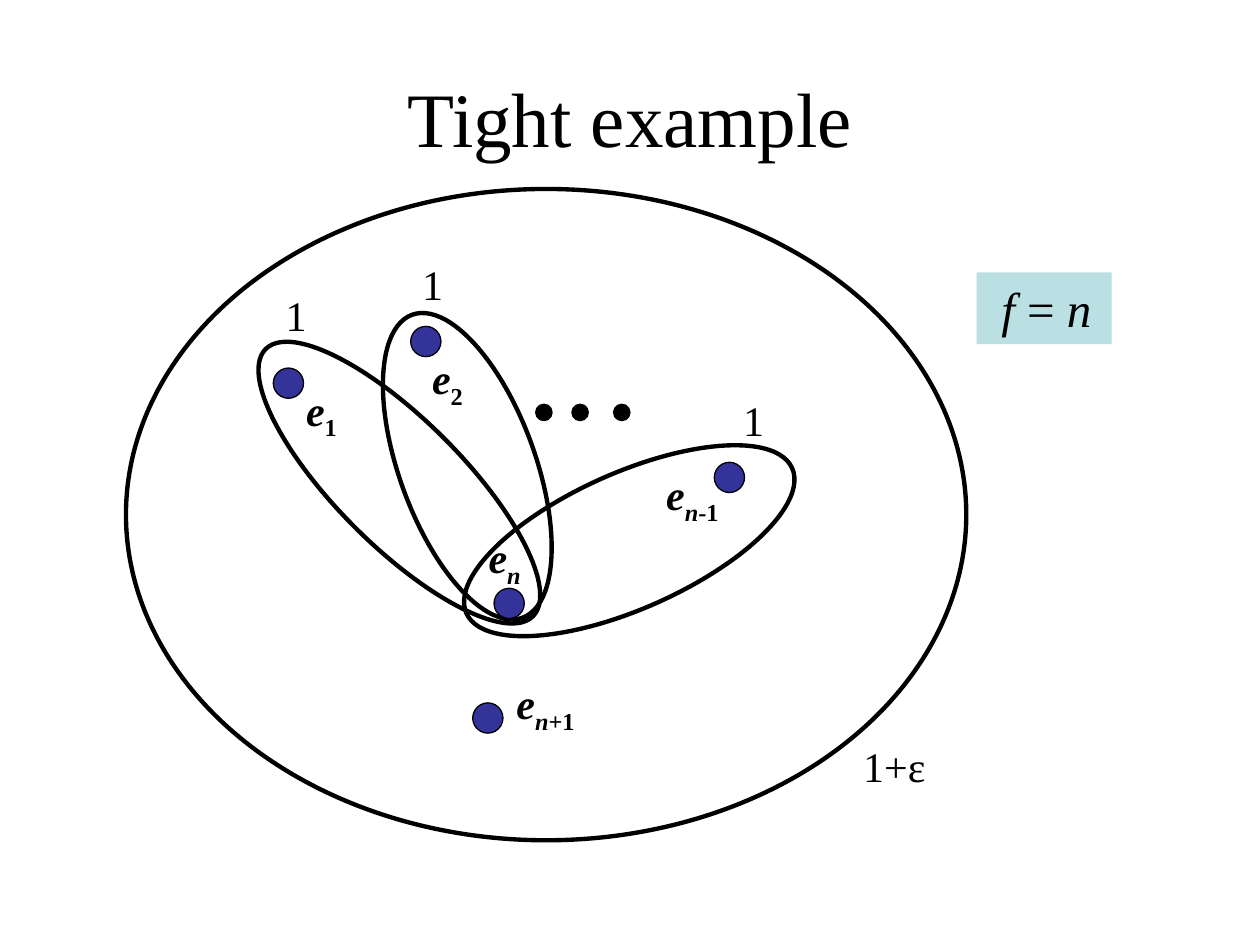
"""Build the slide showing a tight example for set cover."""
from dataclasses import dataclass

from pptx import Presentation
from pptx.dml.color import RGBColor
from pptx.enum.shapes import MSO_SHAPE
from pptx.enum.text import MSO_ANCHOR, MSO_AUTO_SIZE, PP_ALIGN
from pptx.util import Cm, Pt


@dataclass(frozen=True)
class Theme:
    font: str = "Times New Roman"
    ink: RGBColor = RGBColor(0x00, 0x00, 0x00)
    element: RGBColor = RGBColor(0x33, 0x33, 0x99)
    panel: RGBColor = RGBColor(0xBB, 0xE0, 0xE3)
    title_size: int = 44
    label_size: int = 24
    formula_size: int = 28
    set_line: float = 2.5
    dot_line: float = 0.75


THEME = Theme()
TITLE = "Tight example"
TITLE_BOX = (1.27, 0.76, 22.86, 3.18)
SETS = [
    ((4.24, 8.46, 7.62, 2.54), 45),
    ((6.17, 8.03, 6.5, 2.74), 70),
    ((9.09, 9.53, 7.19, 2.74), 156),
    ((2.54, 3.81, 16.94, 13.13), 0),
]
ELEMENT_DIAMETER = 0.61
ELEMENTS = [(9.53, 14.17), (5.51, 7.42), (14.4, 9.32), (9.96, 11.86), (8.28, 6.58)]
ELLIPSIS_DIAMETER = 0.33
ELLIPSIS = [(10.8, 8.15), (11.53, 8.15), (12.37, 8.15)]
LABEL_HEIGHT = 1.27
COSTS = [
    ("1", 5.51, 5.72, 0.94),
    ("1", 8.26, 5.08, 0.94),
    ("1", 14.73, 7.82, 0.94),
    ("1+ε", 17.15, 14.81, 1.78),
]
ELEMENT_LABELS = [
    ("", "1", 5.92, 7.62, 1.17),
    ("", "2", 8.46, 6.99, 1.17),
    ("n", "-1", 13.18, 9.32, 1.68),
    ("n", "", 9.6, 10.59, 1.19),
    ("n", "+1", 10.16, 13.54, 1.8),
]
FORMULA = [(" f ", True), ("= ", False), ("n", True)]
FORMULA_BOX = (19.69, 5.49, 2.72, 1.45)


def lengths(box):
    return [Cm(value) for value in box]


def add_run(paragraph, text, size, bold=False, italic=False, subscript=False):
    run = paragraph.add_run()
    run.text = text
    font = run.font
    font.name, font.size = THEME.font, Pt(size)
    font.bold, font.italic = bold, italic
    font.color.rgb = THEME.ink
    if subscript:
        run._r.get_or_add_rPr().set("baseline", "-25000")


def add_ellipse(slide, box, line_width, fill=None, rotation=0):
    shape = slide.shapes.add_shape(MSO_SHAPE.OVAL, *lengths(box))
    shape.shadow.inherit = False
    shape.rotation = rotation
    shape.line.color.rgb = THEME.ink
    shape.line.width = Pt(line_width)
    if fill is None:
        shape.fill.background()
    else:
        shape.fill.solid()
        shape.fill.fore_color.rgb = fill


def add_label(slide, left, top, width):
    box = slide.shapes.add_textbox(*lengths((left, top, width, LABEL_HEIGHT)))
    box.text_frame.word_wrap = False
    box.text_frame.auto_size = MSO_AUTO_SIZE.SHAPE_TO_FIT_TEXT
    return box.text_frame.paragraphs[0]


def add_title(slide):
    title = slide.shapes.title
    title.left, title.top, title.width, title.height = lengths(TITLE_BOX)
    title.text_frame.vertical_anchor = MSO_ANCHOR.MIDDLE
    paragraph = title.text_frame.paragraphs[0]
    paragraph.alignment = PP_ALIGN.CENTER
    add_run(paragraph, TITLE, THEME.title_size)


def add_formula(slide):
    shape = slide.shapes.add_shape(MSO_SHAPE.RECTANGLE, *lengths(FORMULA_BOX))
    shape.shadow.inherit = False
    shape.fill.solid()
    shape.fill.fore_color.rgb = THEME.panel
    shape.line.fill.background()
    shape.text_frame.vertical_anchor = MSO_ANCHOR.TOP
    shape.text_frame.auto_size = MSO_AUTO_SIZE.SHAPE_TO_FIT_TEXT
    paragraph = shape.text_frame.paragraphs[0]
    paragraph.alignment = PP_ALIGN.LEFT
    for text, italic in FORMULA:
        add_run(paragraph, text, THEME.formula_size, italic=italic)


def main():
    presentation = Presentation()
    presentation.slide_width, presentation.slide_height = Cm(25.4), Cm(19.05)
    slide = presentation.slides.add_slide(presentation.slide_layouts[5])
    add_title(slide)
    for box, rotation in SETS:
        add_ellipse(slide, box, THEME.set_line, rotation=rotation)
    for points, diameter, fill in (
        (ELEMENTS, ELEMENT_DIAMETER, THEME.element),
        (ELLIPSIS, ELLIPSIS_DIAMETER, THEME.ink),
    ):
        for left, top in points:
            add_ellipse(slide, (left, top, diameter, diameter), THEME.dot_line, fill)
    for text, *place in COSTS:
        add_run(add_label(slide, *place), text, THEME.label_size)
    for variable, number, *place in ELEMENT_LABELS:
        paragraph = add_label(slide, *place)
        add_run(paragraph, "e", THEME.label_size, bold=True, italic=True)
        for text, italic in ((variable, True), (number, False)):
            if text:
                add_run(paragraph, text, THEME.label_size, True, italic, subscript=True)
    add_formula(slide)
    presentation.save("out.pptx")


if __name__ == "__main__":
    main()
